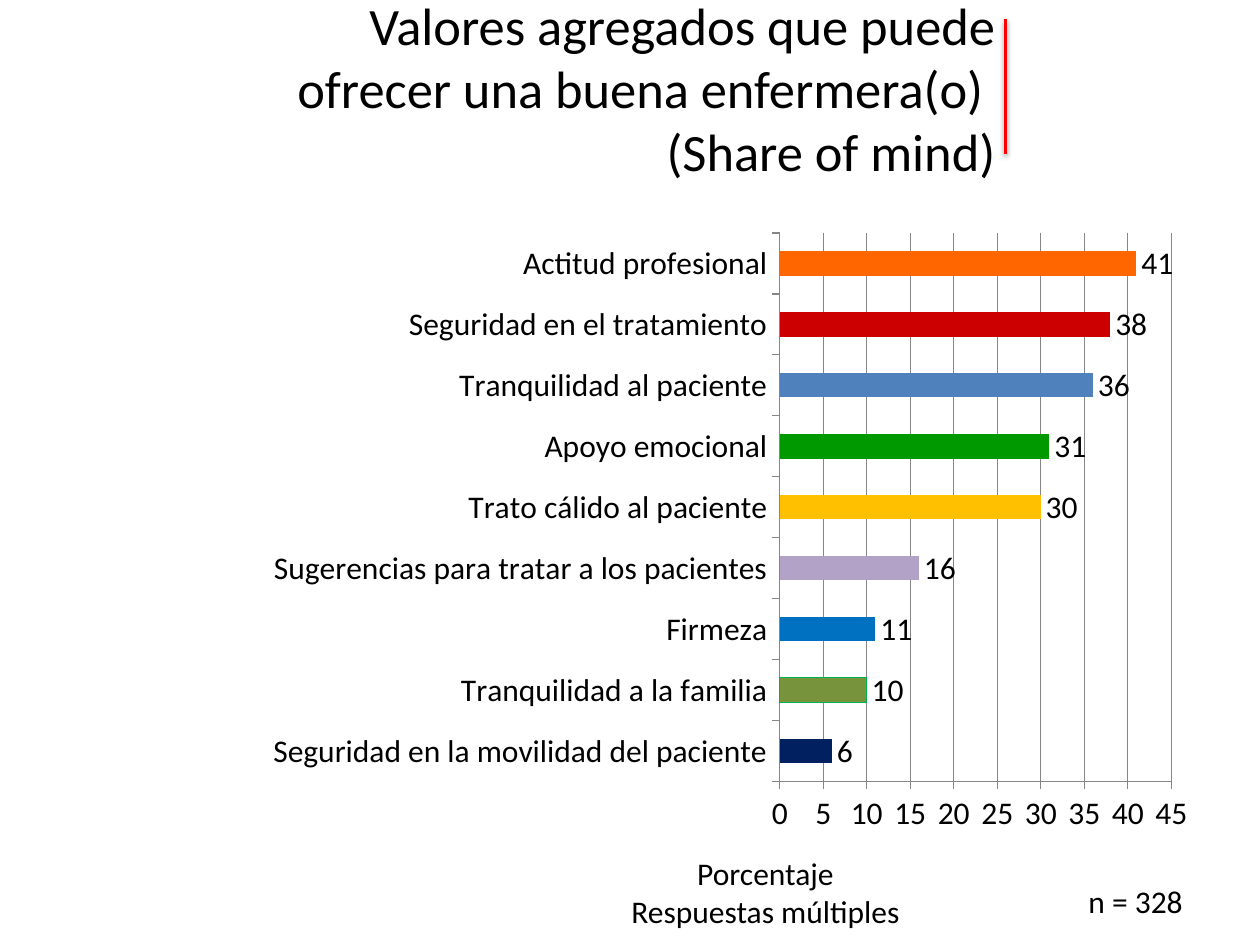
from lxml import etree
from pptx import Presentation
from pptx import util as u
from pptx.chart.data import CategoryChartData
from pptx.dml.color import RGBColor
from pptx.enum import chart as ch
from pptx.enum import shapes, text
from pptx.oxml import parse_xml
from pptx.oxml.ns import nsdecls, qn

BLACK = RGBColor(0x00, 0x00, 0x00)
RED = RGBColor(0xFF, 0x00, 0x00)
GRAY = RGBColor(0x86, 0x86, 0x86)
NAVY = RGBColor(0x00, 0x20, 0x60)
OLIVE = RGBColor(0x77, 0x93, 0x3C)
AZURE = RGBColor(0x00, 0x70, 0xC0)
LILAC = RGBColor(0xB3, 0xA2, 0xC7)
GOLD = RGBColor(0xFF, 0xC0, 0x00)
GREEN = RGBColor(0x00, 0x99, 0x00)
EMERALD = RGBColor(0x00, 0xB0, 0x50)
BLUE = RGBColor(0x4F, 0x81, 0xBD)
CRIMSON = RGBColor(0xCC, 0x00, 0x00)
ORANGE = RGBColor(0xFF, 0x66, 0x00)

# Category, percentage and bar colour, from the bottom up
ANSWERS = [
    ("Seguridad en la movilidad del paciente", 6, NAVY),
    ("Tranquilidad a la familia", 10, OLIVE),
    ("Firmeza", 11, AZURE),
    ("Sugerencias para tratar a los pacientes", 16, LILAC),
    ("Trato cálido al paciente", 30, GOLD),
    ("Apoyo emocional", 31, GREEN),
    ("Tranquilidad al paciente", 36, BLUE),
    ("Seguridad en el tratamiento", 38, CRIMSON),
    ("Actitud profesional", 41, ORANGE),
]


def style_text(font, size=18, color=BLACK, name="Calibri"):
    font.size, font.name = u.Pt(size), name
    font.color.rgb = color


def write(para, content, **style):
    """Write text into a paragraph; a newline becomes a line break."""
    for number, line in enumerate(content.split("\n")):
        if number:
            para.add_line_break()
        span = para.add_run()
        span.text = line
        style_text(span.font, **style)


class SlideBuilder:
    """Places elements on a grid of 100 columns by 75 rows."""

    columns, rows = 100, 75

    def __init__(self, deck):
        self.page = deck.slides.add_slide(deck.slide_layouts[6])
        self.column = deck.slide_width / self.columns
        self.row = deck.slide_height / self.rows

    def place(self, x, y):
        return u.Emu(round(x * self.column)), u.Emu(round(y * self.row))

    def text_box(self, x, y, width, height, paragraphs, wrap=False,
                 align=text.PP_ALIGN.LEFT, anchor=text.MSO_ANCHOR.TOP, **style):
        box = self.page.shapes.add_textbox(*self.place(x, y), *self.place(width, height))
        frame = box.text_frame
        frame.word_wrap, frame.vertical_anchor = wrap, anchor
        for number, content in enumerate(paragraphs):
            para = frame.add_paragraph() if number else frame.paragraphs[0]
            para.alignment = align
            write(para, content, **style)

    def shadowed_line(self, x, top, bottom, color, width):
        line = self.page.shapes.add_connector(
            shapes.MSO_CONNECTOR.STRAIGHT, *self.place(x, top), *self.place(x, bottom))
        line.line.color.rgb, line.line.width = color, u.Pt(width)
        line._element.spPr.append(parse_xml(
            f'<a:effectLst {nsdecls("a")}><a:outerShdw blurRad="{u.Pt(3.1)}" '
            f'dist="{u.Pt(1.6)}" dir="5400000" rotWithShape="0"><a:srgbClr val="000000">'
            '<a:alpha val="38000"/></a:srgbClr></a:outerShdw></a:effectLst>'))

    def bar_chart(self, x, y, width, height, answers, plot):
        data = CategoryChartData()
        data.categories = [name for name, _, _ in answers]
        data.add_series("Series 1", [value for _, value, _ in answers])
        chart = self.page.shapes.add_chart(
            ch.XL_CHART_TYPE.BAR_CLUSTERED, *self.place(x, y),
            *self.place(width, height), data).chart
        chart.has_legend = chart.has_title = False
        style_text(chart.font)

        # Axes and gridlines
        for axis in (chart.category_axis, chart.value_axis):
            axis.major_tick_mark = ch.XL_TICK_MARK.OUTSIDE
            axis.minor_tick_mark = ch.XL_TICK_MARK.NONE
            axis.format.line.color.rgb = GRAY
        scale = chart.value_axis
        scale.minimum_scale, scale.maximum_scale, scale.major_unit = 0, 45, 5
        scale.has_major_gridlines = True
        scale.major_gridlines.format.line.color.rgb = GRAY

        # Bars and value labels
        bars = chart.plots[0]
        bars.gap_width, bars.vary_by_categories = 150, False
        series = bars.series[0]
        series.format.fill.solid()
        series.format.fill.fore_color.rgb = BLUE
        for number, (_, _, color) in enumerate(answers):
            if color != BLUE:
                fill = series.points[number].format.fill
                fill.solid()
                fill.fore_color.rgb = color
            if color == OLIVE:
                series.points[number].format.line.color.rgb = EMERALD
        labels = series.data_labels
        labels.show_value = True
        labels.position = ch.XL_LABEL_POSITION.OUTSIDE_END
        style_text(labels.font)

        # Plot area as shares of the chart
        area = chart._chartSpace.chart.plotArea
        for old in area.findall(qn("c:layout")):
            area.remove(old)
        layout = etree.Element(qn("c:layout"))
        manual = etree.SubElement(layout, qn("c:manualLayout"))
        settings = [("layoutTarget", "inner"), ("xMode", "edge"), ("yMode", "edge"),
                    *zip("xywh", plot)]
        for tag, value in settings:
            etree.SubElement(manual, qn(f"c:{tag}")).set("val", str(value))
        area.insert(0, layout)


def main():
    deck = Presentation()
    deck.slide_width, deck.slide_height = u.Inches(10), u.Inches(7.5)
    slide = SlideBuilder(deck)

    # Title and its red rule
    slide.shadowed_line(79.8, 1.5, 12.2, RED, 2)
    slide.text_box(
        19.2, 0.7, 60.8, 12.5,
        ["Valores agregados que puede ofrecer una buena enfermera(o) \n(Share of mind)"],
        wrap=True, align=text.PP_ALIGN.RIGHT, anchor=text.MSO_ANCHOR.MIDDLE, size=30)

    # Survey results
    slide.bar_chart(20.2, 17.5, 75.8, 49.5, ANSWERS, plot=(0.55, 0.02, 0.41, 0.88))

    # Footnotes
    slide.text_box(49, 67.3, 23.5, 7.1, ["Porcentaje", "Respuestas múltiples"],
                   align=text.PP_ALIGN.CENTER)
    slide.text_box(85.4, 69.5, 9.6, 4, ["n = 328"])

    deck.save("out.pptx")


if __name__ == "__main__":
    main()
